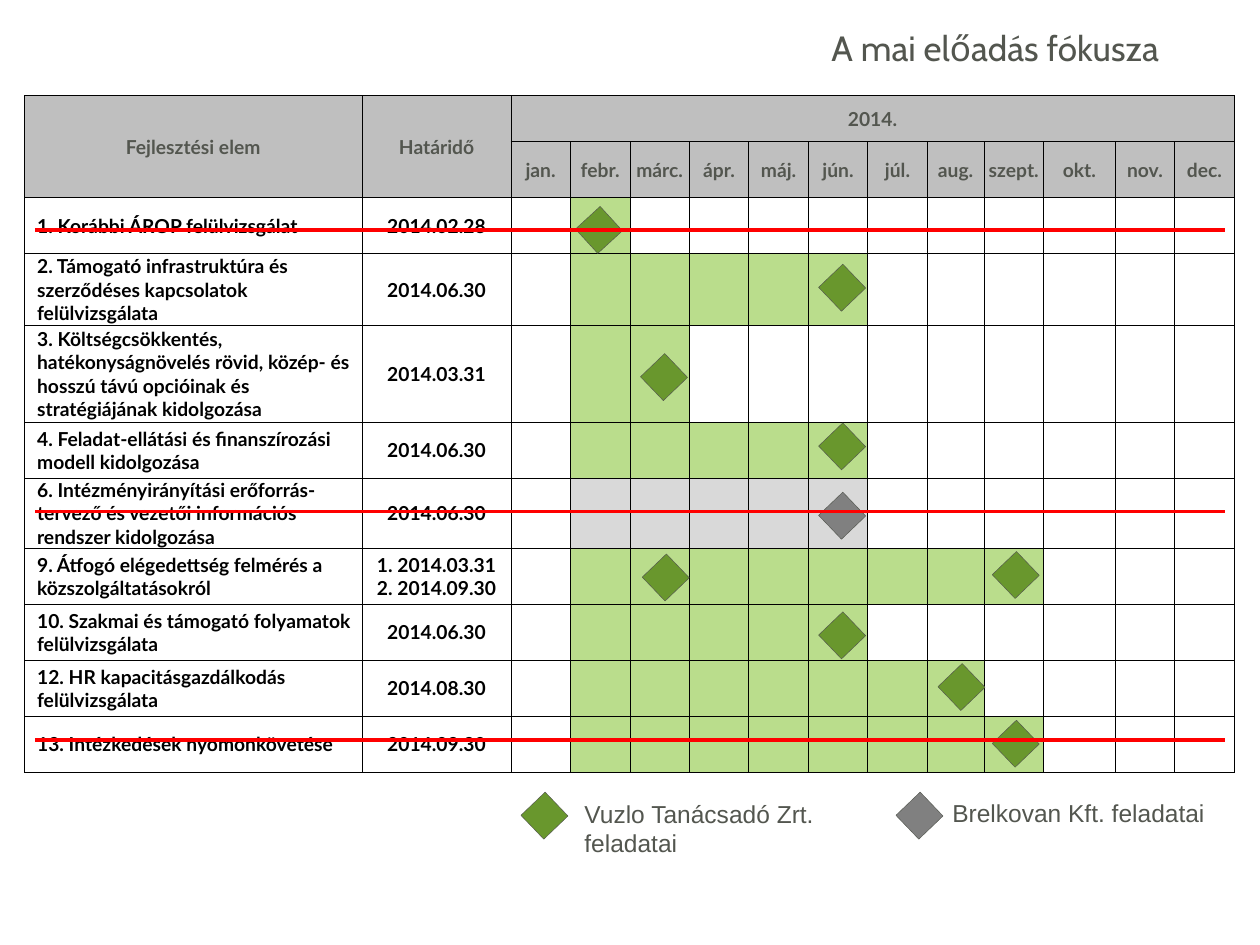
from dataclasses import dataclass
from typing import Any, Optional

import pptx
import pptx.dml.color
import pptx.enum.shapes
import pptx.enum.text
import pptx.oxml
import pptx.oxml.ns
import pptx.util
from lxml import etree

Pt = pptx.util.Pt
ALIGN = pptx.enum.text.PP_ALIGN
MIDDLE = pptx.enum.text.MSO_ANCHOR.MIDDLE

COLORS = {
    "text": "53564F", "task": "000000", "header": "BFBFBF", "border": "000000",
    "green": "69972D", "gray": "808080", "green_bar": "BADD8C",
    "gray_bar": "D9D9D9", "strike": "FF0000",
}
MONTHS = ["jan.", "febr.", "márc.", "ápr.", "máj.", "jún.",
          "júl.", "aug.", "szept.", "okt.", "nov.", "dec."]
FIRST_MONTH_COLUMN = 2
BAR_START = 1  # every bar begins in February
MONTH_WIDTHS = [34] * 7 + [32.4, 34, 41, 34, 34]
COLUMN_WIDTHS = [193, 85] + MONTH_WIDTHS
HEADER_HEIGHTS = [26.4, 32]
TABLE_LEFT, TABLE_TOP = 14, 54.6
DIAMOND_WIDTH, DIAMOND_HEIGHT = 18.9, 19.2


@dataclass
class Diamond:
    left: float
    top: float
    color: str = "green"
    rotation: float = 46.2


@dataclass
class Task:
    name: str
    deadlines: list[str]
    last_month: str
    diamonds: list[Diamond]
    height: float = 32
    bar: str = "green_bar"
    strike_y: Optional[float] = None


@dataclass
class LegendEntry:
    label: str
    diamond: Diamond
    left: float
    top: float


TASKS = [
    Task("1. Korábbi ÁROP felülvizsgálat", ["2014.02.28"], "febr.",
         [Diamond(332.8, 121.8, rotation=47.5)], strike_y=131.4),
    Task("2. Támogató infrastruktúra és szerződéses kapcsolatok felülvizsgálata",
         ["2014.06.30"], "jún.", [Diamond(471.8, 154.8)], height=41.2),
    Task("3. Költségcsökkentés, hatékonyságnövelés rövid, közép- és hosszú távú "
         "opcióinak és stratégiájának kidolgozása",
         ["2014.03.31"], "márc.", [Diamond(370, 205.9)], height=55.3),
    Task("4. Feladat-ellátási és finanszírozási modell kidolgozása",
         ["2014.06.30"], "jún.", [Diamond(471.8, 245.5)]),
    Task("6. Intézményirányítási erőforrás-tervező és vezetői információs "
         "rendszer kidolgozása", ["2014.06.30"], "jún.",
         [Diamond(471.8, 285.1, "gray")], height=40, bar="gray_bar", strike_y=292.4),
    Task("9. Átfogó elégedettség felmérés a közszolgáltatásokról",
         ["1. 2014.03.31", "2. 2014.09.30"], "szept.",
         [Diamond(371, 320.4), Diamond(571, 319)]),
    Task("10. Szakmai és támogató folyamatok felülvizsgálata",
         ["2014.06.30"], "jún.", [Diamond(471.8, 353.5)]),
    Task("12. HR kapacitásgazdálkodás felülvizsgálata",
         ["2014.08.30"], "aug.", [Diamond(540, 383)]),
    Task("13. Intézkedések nyomonkövetése", ["2014.09.30"], "szept.",
         [Diamond(571, 415.4)], strike_y=423),
]
LEGEND = [
    LegendEntry("Vuzlo Tanácsadó Zrt. feladatai", Diamond(301.7, 456.5), 326.9, 452.9),
    LegendEntry("Brelkovan Kft. feladatai", Diamond(516, 456.5, "gray"), 537.1, 452.2),
]


def rgb(name: str) -> pptx.dml.color.RGBColor:
    return pptx.dml.color.RGBColor.from_string(COLORS[name])


def add_run(paragraph: Any, text: str, size: float, font: str, color: str,
            bold: bool = False) -> None:
    run = paragraph.add_run()
    run.text = text
    run.font.size, run.font.name, run.font.bold = Pt(size), font, bold
    run.font.color.rgb = rgb(color)


def format_cell(cell: Any, fill: Optional[str] = None) -> None:
    cell.margin_left = cell.margin_right = cell.margin_top = cell.margin_bottom = 0
    cell.vertical_anchor = MIDDLE
    properties = cell._tc.get_or_add_tcPr()
    for side in ("lnL", "lnR", "lnT", "lnB"):
        properties.append(pptx.oxml.parse_xml(
            f'<a:{side} {pptx.oxml.ns.nsdecls("a")} w="{Pt(0.5)}"><a:solidFill>'
            f'<a:srgbClr val="{COLORS["border"]}"/></a:solidFill></a:{side}>'))
    if fill:
        cell.fill.solid()
        cell.fill.fore_color.rgb = rgb(fill)
    else:
        cell.fill.background()


def write_cell(cell: Any, lines: list[str], color: str, indent: float = 0) -> None:
    for index, line in enumerate(lines):
        frame = cell.text_frame
        paragraph = frame.add_paragraph() if index else frame.paragraphs[0]
        paragraph.alignment = ALIGN.LEFT if indent else ALIGN.CENTER
        if indent:
            paragraph._p.get_or_add_pPr().set("marL", str(Pt(indent)))
        add_run(paragraph, line, 11, "Lato", color, bold=True)


def add_schedule(slide: Any) -> None:
    heights = HEADER_HEIGHTS + [task.height for task in TASKS]
    table = slide.shapes.add_table(
        len(heights), len(COLUMN_WIDTHS), Pt(TABLE_LEFT), Pt(TABLE_TOP),
        Pt(sum(COLUMN_WIDTHS)), Pt(sum(heights))).table
    table.first_row = table.horz_banding = False
    for column, width in zip(table.columns, COLUMN_WIDTHS):
        column.width = Pt(width)
    for row, height in zip(table.rows, heights):
        row.height = Pt(height)

    # Header rows
    for row in range(len(HEADER_HEIGHTS)):
        for column in range(len(COLUMN_WIDTHS)):
            format_cell(table.cell(row, column), "header")
    for column, heading in enumerate(["Fejlesztési elem", "Határidő", "2014."]):
        write_cell(table.cell(0, column), [heading], "text")
    for column, month in enumerate(MONTHS, FIRST_MONTH_COLUMN):
        write_cell(table.cell(1, column), [month], "text")
    for column in range(FIRST_MONTH_COLUMN):
        table.cell(0, column).merge(table.cell(1, column))
    table.cell(0, FIRST_MONTH_COLUMN).merge(table.cell(0, len(COLUMN_WIDTHS) - 1))

    # Task rows with their month bars
    for row, task in enumerate(TASKS, len(HEADER_HEIGHTS)):
        bar_end = MONTHS.index(task.last_month)
        for column in range(len(COLUMN_WIDTHS)):
            in_bar = BAR_START <= column - FIRST_MONTH_COLUMN <= bar_end
            format_cell(table.cell(row, column), task.bar if in_bar else None)
        write_cell(table.cell(row, 0), [task.name], "task", indent=7.2)
        write_cell(table.cell(row, 1), task.deadlines, "task")


def add_diamond(slide: Any, diamond: Diamond) -> None:
    shape = slide.shapes.add_shape(
        pptx.enum.shapes.MSO_SHAPE.RECTANGLE, Pt(diamond.left), Pt(diamond.top),
        Pt(DIAMOND_WIDTH), Pt(DIAMOND_HEIGHT))
    shape.rotation = diamond.rotation
    shape.shadow.inherit = False
    shape.fill.solid()
    shape.fill.fore_color.rgb = rgb(diamond.color)
    shape.line.color.rgb = rgb("text")
    shape.line.width = Pt(0.25)


def add_legend_entry(slide: Any, entry: LegendEntry) -> None:
    add_diamond(slide, entry.diamond)
    label = slide.shapes.add_textbox(Pt(entry.left), Pt(entry.top), Pt(185), Pt(24.5))
    label.text_frame.word_wrap = True
    add_run(label.text_frame.paragraphs[0], entry.label, 14, "Arial", "text")


def add_strike(slide: Any, y: float) -> None:
    strike = slide.shapes.add_connector(
        pptx.enum.shapes.MSO_CONNECTOR.STRAIGHT, Pt(20.2), Pt(y), Pt(699.8), Pt(y))
    strike.line.color.rgb = rgb("strike")
    strike.line.width = Pt(2)
    etree.SubElement(strike._element.spPr, pptx.oxml.ns.qn("a:effectLst"))


def main() -> None:
    deck = pptx.Presentation()
    deck.slide_width, deck.slide_height = Pt(720), Pt(540)
    slide = deck.slides.add_slide(deck.slide_layouts[5])

    # Title
    title = slide.shapes.title
    title.left, title.top, title.width, title.height = Pt(123.8), Pt(10), Pt(545.8), Pt(33.8)
    title.text_frame.vertical_anchor = MIDDLE
    heading = title.text_frame.paragraphs[0]
    heading.alignment = ALIGN.RIGHT
    add_run(heading, "A mai előadás fókusza", 20, "Cabin", "text")

    # Schedule, milestones, legend and struck-out tasks
    add_schedule(slide)
    for task in TASKS:
        for diamond in task.diamonds:
            add_diamond(slide, diamond)
    for entry in LEGEND:
        add_legend_entry(slide, entry)
    for task in TASKS:
        if task.strike_y is not None:
            add_strike(slide, task.strike_y)

    deck.save("out.pptx")


if __name__ == "__main__":
    main()
